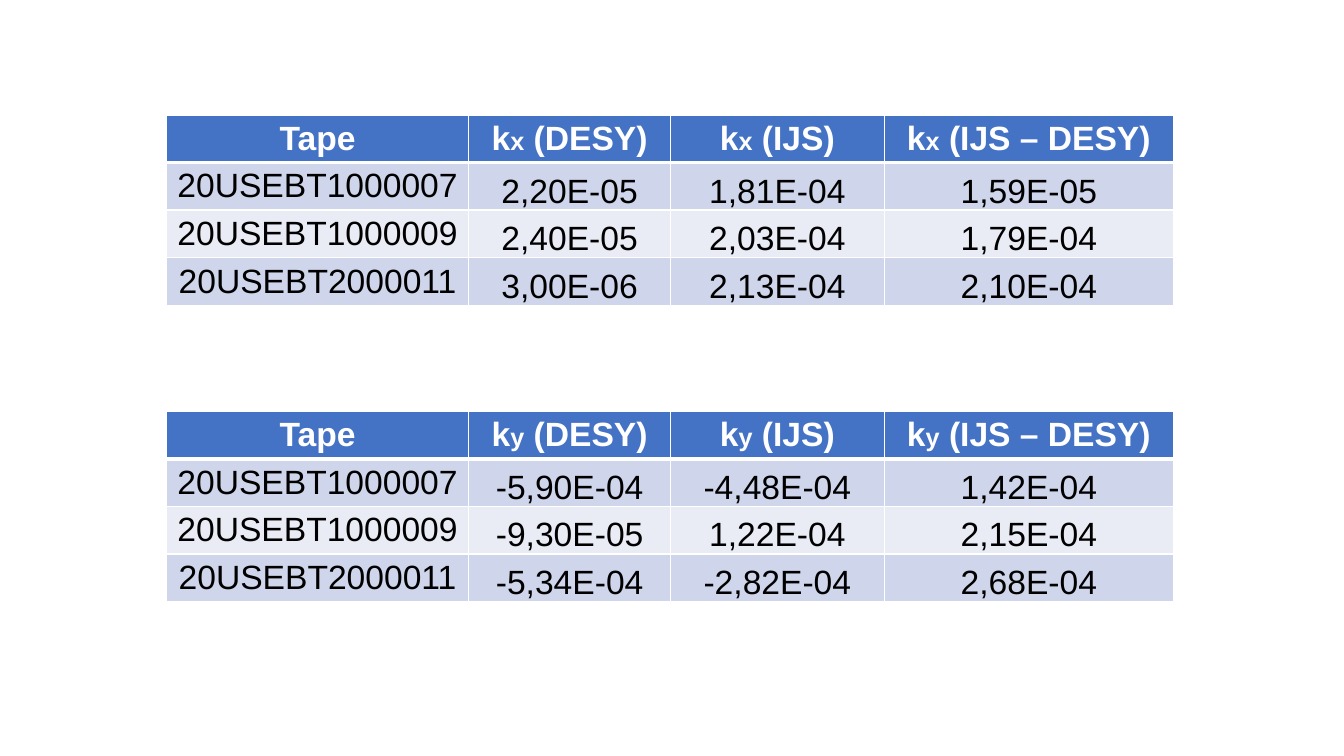
from dataclasses import dataclass

from lxml import etree
from pptx import Presentation
from pptx.dml.color import RGBColor
from pptx.enum.text import MSO_ANCHOR, PP_ALIGN
from pptx.oxml.ns import qn
from pptx.util import Inches, Pt

CENTER = PP_ALIGN.CENTER
BOTTOM = MSO_ANCHOR.BOTTOM

COLORS = {
    "header": "4472C4",
    "odd": "CFD5EA",
    "even": "E9EBF5",
    "white": "FFFFFF",
    "black": "000000",
}
FONT = "Arial"
TEXT_SIZE = 24
AXIS_SIZE = 18
LEFT = 1.65
COL_WIDTHS = (3, 2, 2.12, 2.87)
ROW_HEIGHT = 0.41
SOURCES = ("DESY", "IJS", "IJS – DESY")
TAPES = ("20USEBT1000007", "20USEBT1000009", "20USEBT2000011")


@dataclass
class TapeTable:
    top: float
    axis: str
    values: tuple


TABLES = (
    TapeTable(1.14, "x", (
        ("2,20E-05", "1,81E-04", "1,59E-05"),
        ("2,40E-05", "2,03E-04", "1,79E-04"),
        ("3,00E-06", "2,13E-04", "2,10E-04"),
    )),
    TapeTable(4.08, "y", (
        ("-5,90E-04", "-4,48E-04", "1,42E-04"),
        ("-9,30E-05", "1,22E-04", "2,15E-04"),
        ("-5,34E-04", "-2,82E-04", "2,68E-04"),
    )),
)


def add_borders(cell, row: int) -> None:
    widths = {"L": 1, "R": 1, "T": 3 if row == 1 else 1, "B": 3 if row == 0 else 1}
    tc_pr = cell._tc.get_or_add_tcPr()
    for side, width in widths.items():
        ln = etree.SubElement(tc_pr, qn(f"a:ln{side}"), w=str(Pt(width)))
        fill = etree.SubElement(ln, qn("a:solidFill"))
        etree.SubElement(fill, qn("a:srgbClr"), val=COLORS["white"])


def fill_cell(cell, row: int, runs: list) -> None:
    is_header = row == 0
    add_borders(cell, row)
    fill = "header" if is_header else "odd" if row % 2 else "even"
    cell.fill.solid()
    cell.fill.fore_color.rgb = RGBColor.from_string(COLORS[fill])
    p = cell.text_frame.paragraphs[0]
    p.alignment = CENTER
    for text, size in runs:
        r = p.add_run()
        r.text = text
        r.font.name = FONT
        r.font.size = Pt(size)
        r.font.bold = is_header
        r.font.color.rgb = RGBColor.from_string(COLORS["white" if is_header else "black"])


def add_tape_table(s, data: TapeTable) -> None:
    rows = len(TAPES) + 1
    table = s.shapes.add_table(
        rows, len(COL_WIDTHS), Inches(LEFT), Inches(data.top),
        Inches(sum(COL_WIDTHS)), Inches(rows * ROW_HEIGHT),
    ).table
    for column, width in zip(table.columns, COL_WIDTHS):
        column.width = Inches(width)

    fill_cell(table.cell(0, 0), 0, [("Tape", TEXT_SIZE)])
    for col, source in enumerate(SOURCES, 1):
        runs = [("k", TEXT_SIZE), (data.axis, AXIS_SIZE), (f" ({source})", TEXT_SIZE)]
        fill_cell(table.cell(0, col), 0, runs)

    for row, (tape, values) in enumerate(zip(TAPES, data.values), 1):
        fill_cell(table.cell(row, 0), row, [(tape, TEXT_SIZE)])
        for col, value in enumerate(values, 1):
            cell = table.cell(row, col)
            cell.vertical_anchor = BOTTOM
            cell.margin_left = cell.margin_right = cell.margin_top = Inches(0.01)
            cell.margin_bottom = 0
            fill_cell(cell, row, [(value, TEXT_SIZE)])


def main() -> None:
    prs = Presentation()
    prs.slide_width = Inches(13.33)
    prs.slide_height = Inches(7.5)
    s = prs.slides.add_slide(prs.slide_layouts[6])
    for data in TABLES:
        add_tape_table(s, data)
    prs.save("out.pptx")


if __name__ == "__main__":
    main()
